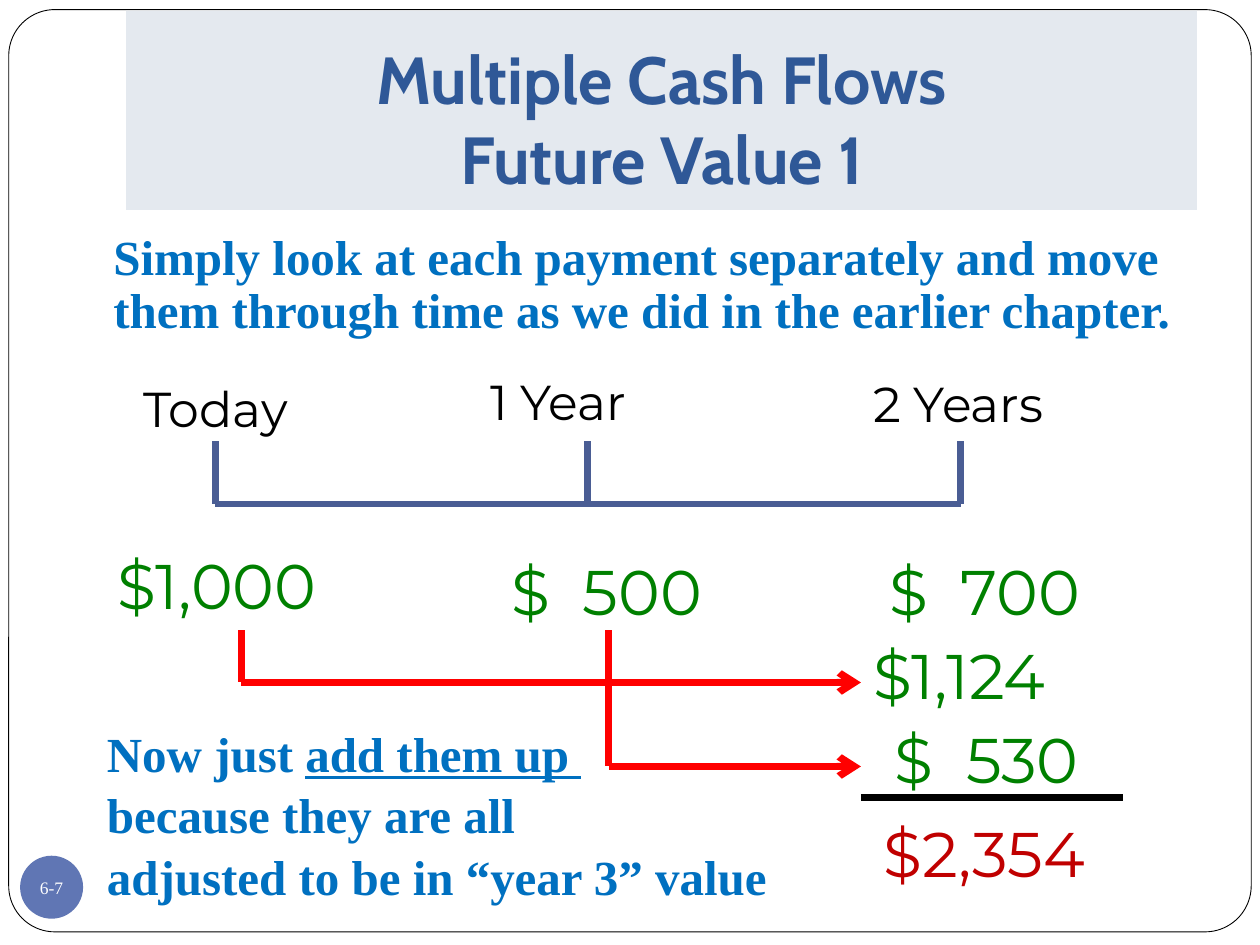
"""Build a slide on the future value of multiple cash flows."""
from lxml import etree
from pptx import Presentation
from pptx.dml.color import RGBColor
from pptx.enum import shapes, text
from pptx.oxml import ns
from pptx.util import Pt

WHITE = RGBColor(0xFF, 0xFF, 0xFF)
BLACK = RGBColor(0x00, 0x00, 0x00)
PALE = RGBColor(0xE4, 0xE9, 0xEF)
NAVY = RGBColor(0x2F, 0x58, 0x97)
BADGE = RGBColor(0x60, 0x76, 0xB4)
SLATE = RGBColor(0x4A, 0x5D, 0x94)
BLUE = RGBColor(0x00, 0x70, 0xC0)
GREEN = RGBColor(0x00, 0x80, 0x00)
RED = RGBColor(0xFF, 0x00, 0x00)
DARK_RED = RGBColor(0xC0, 0x00, 0x00)

SERIF = "Times New Roman"
SANS = "Montserrat"


def add_text(para, words, *, font=SANS, size=36, color=BLACK, bold=False, underline=False):
    for index, part in enumerate(words.split("\v")):
        if index:
            para.add_line_break()
        span = para.add_run()
        span.text = part
        span.font.name = font
        span.font.size = Pt(size)
        span.font.bold = bold
        span.font.underline = underline
        span.font.color.rgb = color


class SlideBuilder:
    def __init__(self, page):
        self.page = page
        self.line_width = 4

    def title(self, words, left, top, width, height):
        box = self.page.shapes.title
        box.left, box.top, box.width, box.height = map(Pt, (left, top, width, height))
        box.fill.solid()
        box.fill.fore_color.rgb = PALE
        frame = box.text_frame
        frame.auto_size = text.MSO_AUTO_SIZE.NONE
        frame.vertical_anchor = text.MSO_ANCHOR.BOTTOM
        frame.margin_bottom = Pt(7.2)
        para = frame.paragraphs[0]
        para.alignment = text.PP_ALIGN.CENTER
        add_text(para, words, font="Cabin", size=38, color=NAVY, bold=True)

    def shape(self, kind, left, top, width, height, fill, line=None):
        box = self.page.shapes.add_shape(kind, Pt(left), Pt(top), Pt(width), Pt(height))
        box.shadow.inherit = False
        box.fill.solid()
        box.fill.fore_color.rgb = fill
        if line is None:
            box.line.fill.background()
        else:
            box.line.color.rgb = line
            box.line.width = Pt(0.5)
        return box

    def frame(self, left, top, width, height):
        box = self.shape(shapes.MSO_SHAPE.ROUNDED_RECTANGLE, left, top, width, height, WHITE, BLACK)
        box.adjustments[0] = 0.05

    def badge(self, words, left, top, side):
        box = self.shape(shapes.MSO_SHAPE.OVAL, left, top, side, side, BADGE)
        frame = box.text_frame
        frame.word_wrap = False
        frame.margin_left = frame.margin_right = frame.margin_top = frame.margin_bottom = 0
        frame.vertical_anchor = text.MSO_ANCHOR.MIDDLE
        para = frame.paragraphs[0]
        para.alignment = text.PP_ALIGN.CENTER
        add_text(para, words, font=SERIF, size=10, color=WHITE)

    def textbox(self, left, top, width, height):
        box = self.page.shapes.add_textbox(Pt(left), Pt(top), Pt(width), Pt(height))
        box.text_frame.word_wrap = True
        return box.text_frame

    def label(self, words, left, top, width, **style):
        height = 51 if style.get("size", 36) == 36 else 41
        add_text(self.textbox(left, top, width, height).paragraphs[0], words, **style)

    def line(self, start, end, color, arrow=False):
        line = self.page.shapes.add_connector(
            shapes.MSO_CONNECTOR.STRAIGHT, *map(Pt, start + end))
        line.line.color.rgb = color
        line.line.width = Pt(self.line_width)
        if arrow:
            etree.SubElement(line.line._get_or_add_ln(), ns.qn("a:tailEnd"), type="arrow")
        etree.SubElement(line._element.spPr, ns.qn("a:effectLst"))

    def elbow(self, left, top, right, bottom, color):
        self.line((left, bottom), (right, bottom), color, arrow=True)
        self.line((left, top), (left, bottom), color)


def main():
    deck = Presentation()
    deck.slide_width, deck.slide_height = Pt(720), Pt(540)
    page = deck.slides.add_slide(deck.slide_layouts[5])
    builder = SlideBuilder(page)
    builder.frame(5, 5.5, 710, 527)
    page.shapes._spTree.append(page.shapes.title._element)
    builder.badge("6-7", 11.5, 489, 36)
    builder.title("Multiple Cash Flows\vFuture Value 1", 72, 6, 612, 114)

    heading = {"font": SERIF, "size": 28, "color": BLUE, "bold": True}
    intro = builder.textbox(36, 129.6, 666, 356.4)
    intro.margin_left = Pt(28.8)
    para = intro.paragraphs[0]
    para.line_spacing = 0.9
    para.space_before = Pt(5.8)
    add_text(para, "Simply look at each payment separately and move "
             "them through time as we did in the earlier chapter.", **heading)

    axis_left, axis_right, axis_y = 123, 549, 288
    builder.line((axis_left, axis_y), (axis_right, axis_y), SLATE)
    for x in (axis_left, (axis_left + axis_right) / 2, axis_right):
        builder.line((x, axis_y - 36), (x, axis_y), SLATE)

    for words, left, top, width in (("Today", 75, 213, 108),
                                    ("1 Year", 273, 209, 126),
                                    ("2 Years", 492, 210, 138)):
        builder.label(words, left, top, width, size=28)

    for words, left, top, width, color in (("$1,000", 60, 309, 159, GREEN),
                                           ("$  500", 285, 312, 138, GREEN),
                                           ("$  700", 501, 312, 159, GREEN),
                                           ("$1,124", 492, 360, 148, GREEN),
                                           ("$  530", 504, 408, 136, GREEN),
                                           ("$2,354", 498, 462, 174, DARK_RED)):
        builder.label(words, left, top, width, color=color)

    builder.elbow(138, 360, 492, 390, RED)
    builder.elbow(348, 360, 492, 438, RED)
    builder.line((492, 456), (642, 456), BLACK)

    closing = builder.textbox(54, 408, 486, 109.5)
    for index, spans in enumerate(([("Now just ", False), ("add them up ", True)],
                                   [("because they are all", False)],
                                   [("adjusted to be in “year 3” value", False)])):
        para = closing.add_paragraph() if index else closing.paragraphs[0]
        para.line_spacing = 1.05
        for words, underline in spans:
            add_text(para, words, underline=underline, **heading)

    deck.save("out.pptx")


if __name__ == "__main__":
    main()
